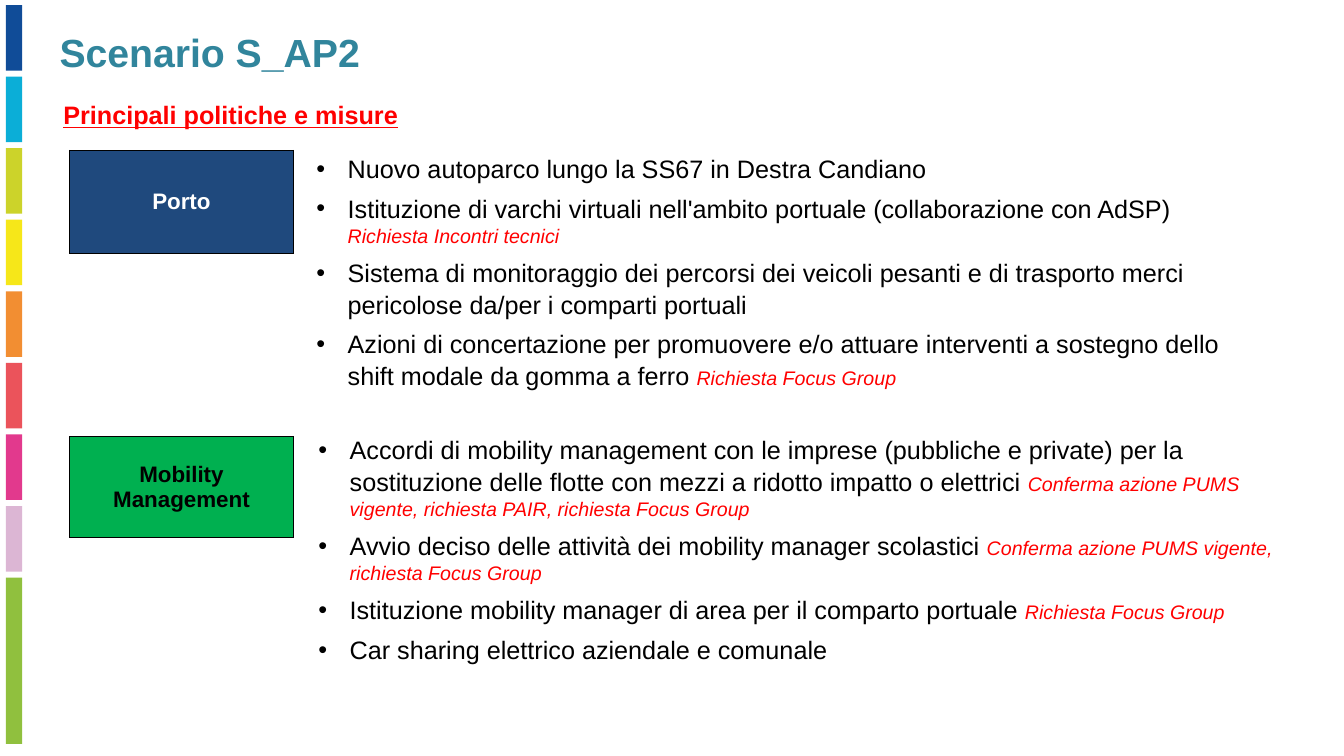
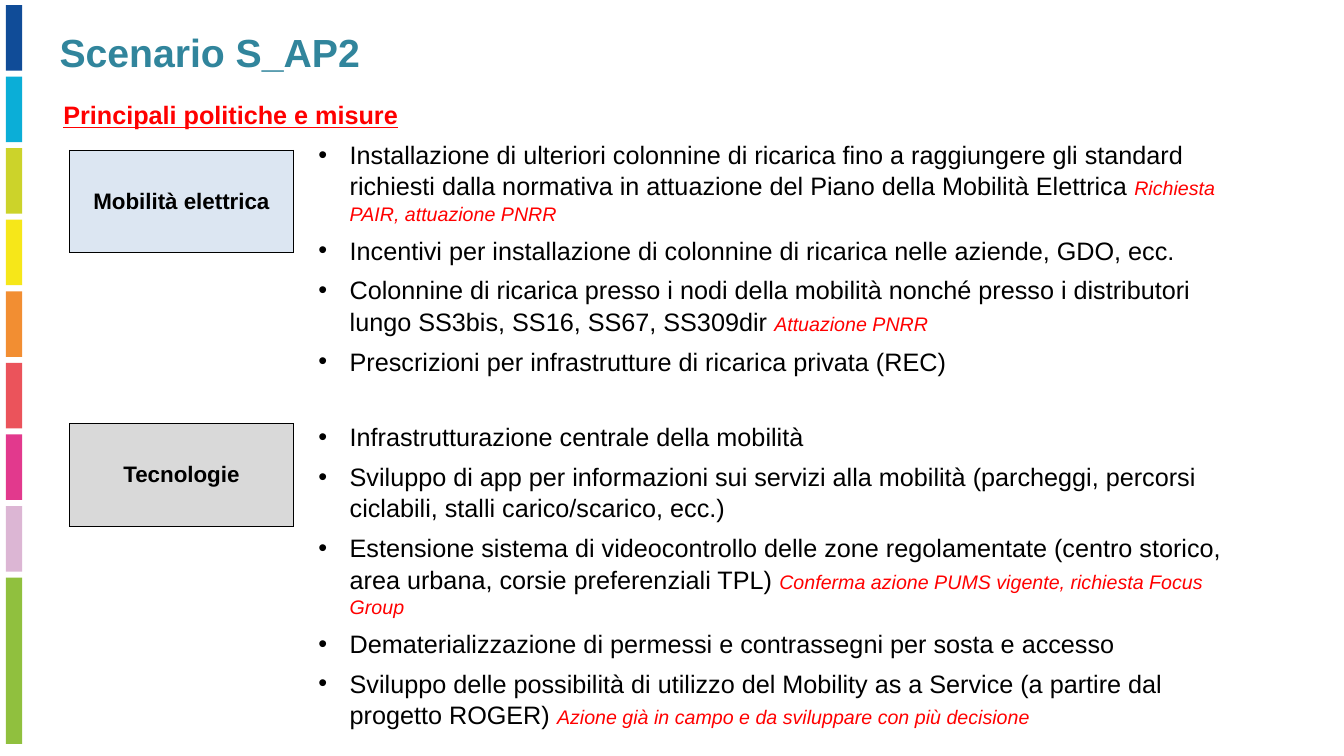
from dataclasses import dataclass

from lxml import etree
from pptx import Presentation
from pptx.dml.color import RGBColor
from pptx.enum import shapes, text
from pptx.oxml import ns
from pptx.util import Inches, Pt


@dataclass(frozen=True)
class Theme:
    font: str = "Arial"
    teal: str = "31859C"
    red: str = "FF0000"
    black: str = "000000"
    white: str = "FFFFFF"
    title: int = 28
    body: int = 18
    label: int = 16
    note: int = 14
    bands: tuple = ("104C98", "0BAED7", "CCD32A", "F6E719", "F28E32",
                    "EB535B", "E2398D", "DCB6D4", "90C03E")


T = Theme()
TITLE = "Scenario S_AP2"
HEAD = "Principali politiche e misure"

# Each topic: label, fill, label colour, label top and height, list box, items.
# Each item: measure, red note.
SLIDES = [
    [
        ("Porto", "1F497D", T.white, 1.49, 1.02, (3.04, 1.46, 9.29, 2.47), [
            ("Nuovo autoparco lungo la SS67 in Destra Candiano", ""),
            ("Istituzione di varchi virtuali nell'ambito portuale "
             "(collaborazione con AdSP) ", "Richiesta Incontri tecnici"),
            ("Sistema di monitoraggio dei percorsi dei veicoli pesanti e di "
             "trasporto merci pericolose da/per i comparti portuali", ""),
            ("Azioni di concertazione per promuovere e/o attuare interventi a "
             "sostegno dello shift modale da gomma a ferro ",
             "Richiesta Focus Group"),
        ]),
        ("Mobility Management", "00B050", T.black, 4.33, 1,
         (3.06, 4.25, 9.75, 2.34), [
            ("Accordi di mobility management con le imprese (pubbliche e "
             "private) per la sostituzione delle flotte con mezzi a ridotto "
             "impatto o elettrici ",
             "Conferma azione PUMS vigente, richiesta PAIR, "
             "richiesta Focus Group"),
            ("Avvio deciso delle attività dei mobility manager scolastici ",
             "Conferma azione PUMS vigente, richiesta Focus Group"),
            ("Istituzione mobility manager di area per il comparto portuale ",
             "Richiesta Focus Group"),
            ("Car sharing elettrico aziendale e comunale", ""),
        ]),
    ],
    [
        ("Mobilità elettrica", "DCE6F2", T.black, 1.49, 1.01,
         (3.06, 1.32, 9.29, 2.47), [
            ("Installazione di ulteriori colonnine di ricarica fino a "
             "raggiungere gli standard richiesti dalla normativa in "
             "attuazione del Piano della Mobilità Elettrica ",
             "Richiesta PAIR, attuazione PNRR"),
            ("Incentivi per installazione di colonnine di ricarica nelle "
             "aziende, GDO, ecc.", ""),
            ("Colonnine di ricarica presso i nodi della mobilità nonché presso "
             "i distributori lungo SS3bis, SS16, SS67, SS309dir ",
             "Attuazione PNRR"),
            ("Prescrizioni per infrastrutture di ricarica privata (REC)", ""),
        ]),
        ("Tecnologie", "D9D9D9", T.black, 4.2, 1.02, (3.06, 4.12, 9.29, 3.1), [
            ("Infrastrutturazione centrale della mobilità", ""),
            ("Sviluppo di app per informazioni sui servizi alla mobilità "
             "(parcheggi, percorsi ciclabili, stalli carico/scarico, ecc.)",
             ""),
            ("Estensione sistema di videocontrollo delle zone regolamentate "
             "(centro storico, area urbana, corsie preferenziali TPL) ",
             "Conferma azione PUMS vigente, richiesta Focus Group"),
            ("Dematerializzazione di permessi e contrassegni per sosta e "
             "accesso", ""),
            ("Sviluppo delle possibilità di utilizzo del Mobility as a Service "
             "(a partire dal progetto ROGER) ",
             "Azione già in campo e da sviluppare con più decisione"),
        ]),
    ],
]


def style(run, size, color, bold=False, italic=False):
    font = run.font
    font.name, font.size = T.font, Pt(size)
    font.bold, font.italic = bold, italic
    font.color.rgb = RGBColor.from_string(color)


def add_box(slide, left, top, width, height):
    box = slide.shapes.add_textbox(*map(Inches, (left, top, width, height)))
    box.text_frame.word_wrap = True
    return box.text_frame


prs = Presentation()
prs.slide_width, prs.slide_height = Inches(13.33), Inches(7.5)
layout = prs.slide_layouts.get_by_name("Title Only")

# Shared title place
place = layout.placeholders[0]
place.left, place.top = Inches(0.49), Inches(0.23)
place.width, place.height = Inches(11.77), Inches(0.57)

for num, topics in enumerate(SLIDES):
    slide = prs.slides.add_slide(layout)

    # Colour bands, drawn once and moved to the layout
    if num == 0:
        for i, color in enumerate(T.bands):
            tall = 1.65 if i == len(T.bands) - 1 else 0.65
            band = slide.shapes.add_shape(
                shapes.MSO_SHAPE.RECTANGLE, Inches(0.06),
                Inches(0.05 + 0.71 * i), Inches(0.16), Inches(tall))
            band.shadow.inherit = False
            band.fill.solid()
            band.fill.fore_color.rgb = RGBColor.from_string(color)
            band.line.fill.background()
            layout.shapes.element.append(band.element)

    # Title and heading
    frame = slide.shapes.title.text_frame
    frame.text = TITLE
    frame.word_wrap = True
    frame.auto_size = text.MSO_AUTO_SIZE.NONE
    frame.vertical_anchor = text.MSO_ANCHOR.TOP
    frame.paragraphs[0].alignment = text.PP_ALIGN.LEFT
    style(frame.paragraphs[0].runs[0], T.title, T.teal, bold=True)

    frame = add_box(slide, 0.53, 0.94, 12.51, 0.4)
    frame.text = HEAD
    run = frame.paragraphs[0].runs[0]
    style(run, T.body, T.red, bold=True)
    run.font.underline = True

    for label, fill, ink, top, high, place, items in topics:
        # Topic label: a one-cell table
        table = slide.shapes.add_table(
            1, 1, Inches(0.69), Inches(top), Inches(2.22), Inches(high)).table
        table.first_row = table.horz_banding = False
        cell = table.cell(0, 0)
        cell.text = label
        cell.vertical_anchor = text.MSO_ANCHOR.MIDDLE
        cell.margin_left = cell.margin_right = cell.margin_top = Inches(0.01)
        cell.margin_bottom = 0
        para = cell.text_frame.paragraphs[0]
        para.alignment = text.PP_ALIGN.CENTER
        style(para.runs[0], T.label, ink, bold=True)
        props = cell._tc.get_or_add_tcPr()
        for side in ("lnL", "lnR", "lnT", "lnB"):
            line = etree.SubElement(props, ns.qn("a:" + side), w=str(Pt(0.5)))
            solid = etree.SubElement(line, ns.qn("a:solidFill"))
            etree.SubElement(solid, ns.qn("a:srgbClr"), val=T.black)
        cell.fill.solid()
        cell.fill.fore_color.rgb = RGBColor.from_string(fill)

        # Measures
        frame = add_box(slide, *place)
        for i, (main, note) in enumerate(items):
            para = frame.add_paragraph() if i else frame.paragraphs[0]
            props = para._p.get_or_add_pPr()
            props.set("marL", str(Inches(0.31)))
            props.set("indent", str(-Inches(0.31)))
            etree.SubElement(props, ns.qn("a:buFont"), typeface=T.font)
            etree.SubElement(props, ns.qn("a:buChar"), char="•")
            para.line_spacing = 1.04
            para.space_before = Pt(3 if i else 0)
            para.space_after = Pt(3)
            run = para.add_run()
            run.text = main
            style(run, T.body, T.black)
            if note:
                run = para.add_run()
                run.text = note
                style(run, T.note, T.red, italic=True)

prs.save("out.pptx")
